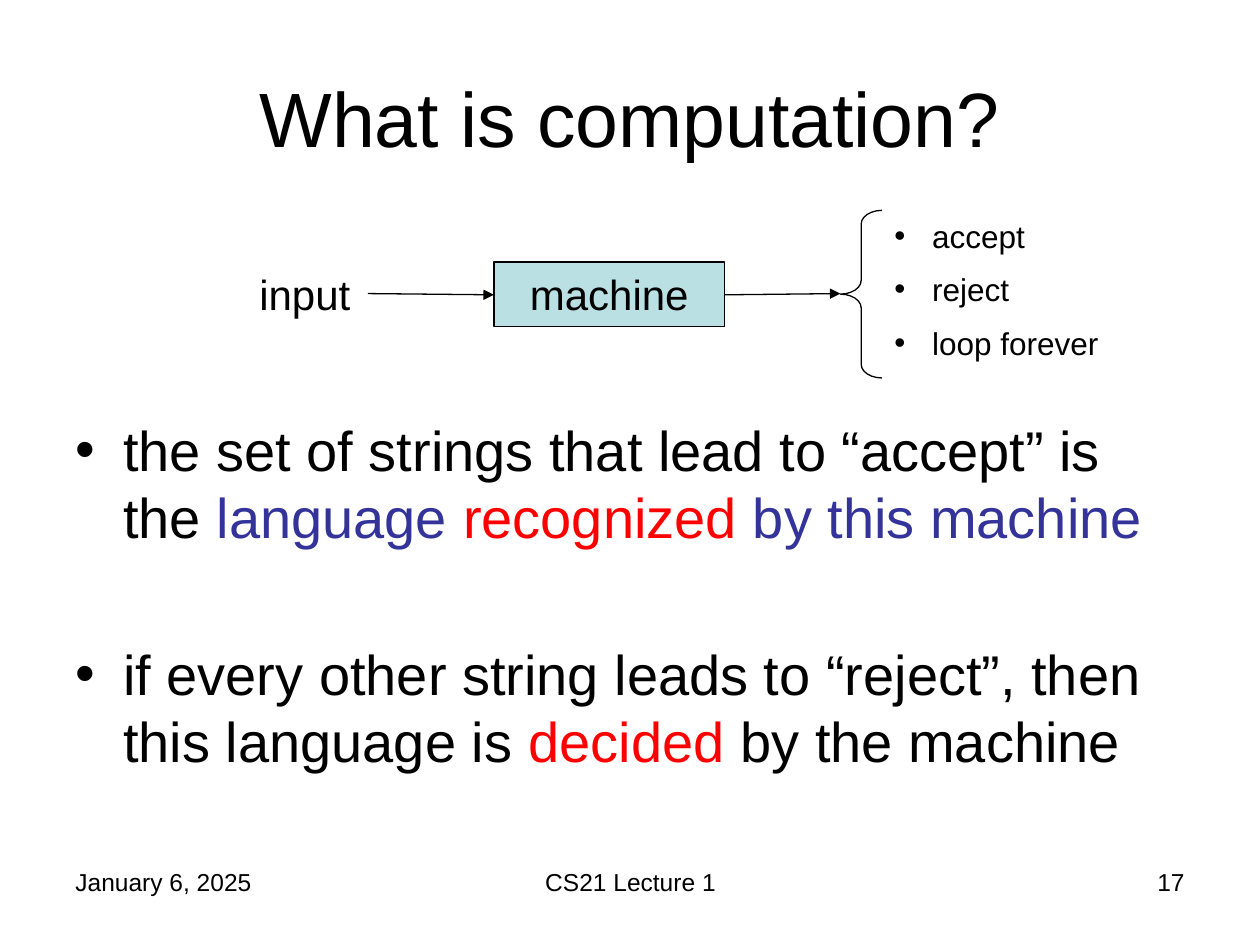
from pptx import Presentation
from pptx.dml.color import RGBColor
from pptx.enum.shapes import MSO_CONNECTOR, MSO_SHAPE
from pptx.enum.text import MSO_ANCHOR, PP_ALIGN
from pptx.oxml.ns import qn
from pptx.util import Inches, Pt
from lxml import etree

LEFT, CENTER, RIGHT = PP_ALIGN.LEFT, PP_ALIGN.CENTER, PP_ALIGN.RIGHT
TOP, MIDDLE = MSO_ANCHOR.TOP, MSO_ANCHOR.MIDDLE
FONT = "Arial"
COLORS = {"black": "000000", "blue": "333399", "red": "FF0000", "box": "BBE0E3"}


def color(name):
    return RGBColor.from_string(COLORS[name])


def add_run(p, text, size, name="black"):
    r = p.add_run()
    r.text = text
    r.font.name = FONT
    r.font.size = Pt(size)
    r.font.color.rgb = color(name)


def add_text(slide, box, text, size, align=LEFT, anchor=TOP):
    tf = slide.shapes.add_textbox(*map(Inches, box)).text_frame
    tf.word_wrap = True
    tf.vertical_anchor = anchor
    p = tf.paragraphs[0]
    p.alignment = align
    add_run(p, text, size)


def add_bullets(slide, box, items, size, indent, gap):
    """Each item is a list of (text, color name) pairs."""
    tf = slide.shapes.add_textbox(*map(Inches, box)).text_frame
    tf.word_wrap = True
    for i, item in enumerate(items):
        p = tf.add_paragraph() if i else tf.paragraphs[0]
        if i:
            p.space_before = Pt(gap)
        pPr = p._p.get_or_add_pPr()
        pPr.set("marL", str(Inches(indent)))
        pPr.set("indent", str(-Inches(indent)))
        etree.SubElement(pPr, qn("a:buFont")).set("typeface", FONT)
        etree.SubElement(pPr, qn("a:buChar")).set("char", "•")
        for text, name in item:
            add_run(p, text, size, name)


def add_outlined(slide, kind, box, fill=None):
    sp = slide.shapes.add_shape(kind, *map(Inches, box))
    sp.shadow.inherit = False
    sp.line.color.rgb = color("black")
    sp.line.width = Pt(0.75)
    if fill:
        sp.fill.solid()
        sp.fill.fore_color.rgb = color(fill)
    else:
        sp.fill.background()
    return sp


def add_arrow(slide, start, end):
    line = slide.shapes.add_connector(
        MSO_CONNECTOR.STRAIGHT, *map(Inches, start + end))
    line.line.color.rgb = color("black")
    line.line.width = Pt(0.75)
    etree.SubElement(line.line._get_or_add_ln(), qn("a:tailEnd")).set("type", "triangle")
    etree.SubElement(line._element.spPr, qn("a:effectLst"))


def add_machine(slide):
    # Input, machine and its possible outcomes
    add_text(slide, (1.92, 2.08, 1, 0.5), "input", 24, CENTER)
    sp = add_outlined(slide, MSO_SHAPE.RECTANGLE, (3.92, 2.08, 1.83, 0.51), "box")
    tf = sp.text_frame
    tf.vertical_anchor = TOP
    p = tf.paragraphs[0]
    p.alignment = CENTER
    add_run(p, "machine", 24)

    brace = add_outlined(slide, MSO_SHAPE.LEFT_BRACE, (6.67, 1.67, 0.33, 1.33))
    brace.adjustments[0] = 0.33
    outcomes = [[(text, "black")] for text in ("accept", "reject", "loop forever")]
    add_bullets(slide, (7, 1.67, 2.42, 1.3), outcomes, 18, 0.3, 9)

    add_arrow(slide, (2.92, 2.33), (3.92, 2.34))
    add_arrow(slide, (5.75, 2.34), (6.67, 2.33))


def main():
    prs = Presentation()
    prs.slide_width, prs.slide_height = Inches(10), Inches(7.5)
    slide = prs.slides.add_slide(prs.slide_layouts[6])

    # Title
    add_text(slide, (0.5, 0.3, 9, 1.25), "What is computation?", 44, CENTER, MIDDLE)

    add_machine(slide)

    # Definitions
    definitions = [
        [("the set of strings that lead to “accept” is the ", "black"),
         ("language ", "blue"), ("recognized", "red"), (" by this machine", "blue")],
        [("if every other string leads to “reject”, then this language is ", "black"),
         ("decided", "red"), (" by the machine", "black")],
    ]
    add_bullets(slide, (0.5, 3.25, 9, 3.45), definitions, 32, 0.38, 51)

    # Footer
    for left, width, text, align in (
            (0.5, 2.33, "January 6, 2025", LEFT),
            (3.42, 3.17, "CS21 Lecture 1", CENTER),
            (7.17, 2.33, "17", RIGHT)):
        add_text(slide, (left, 6.83, width, 0.52), text, 14, align)

    prs.save("out.pptx")


if __name__ == "__main__":
    main()
